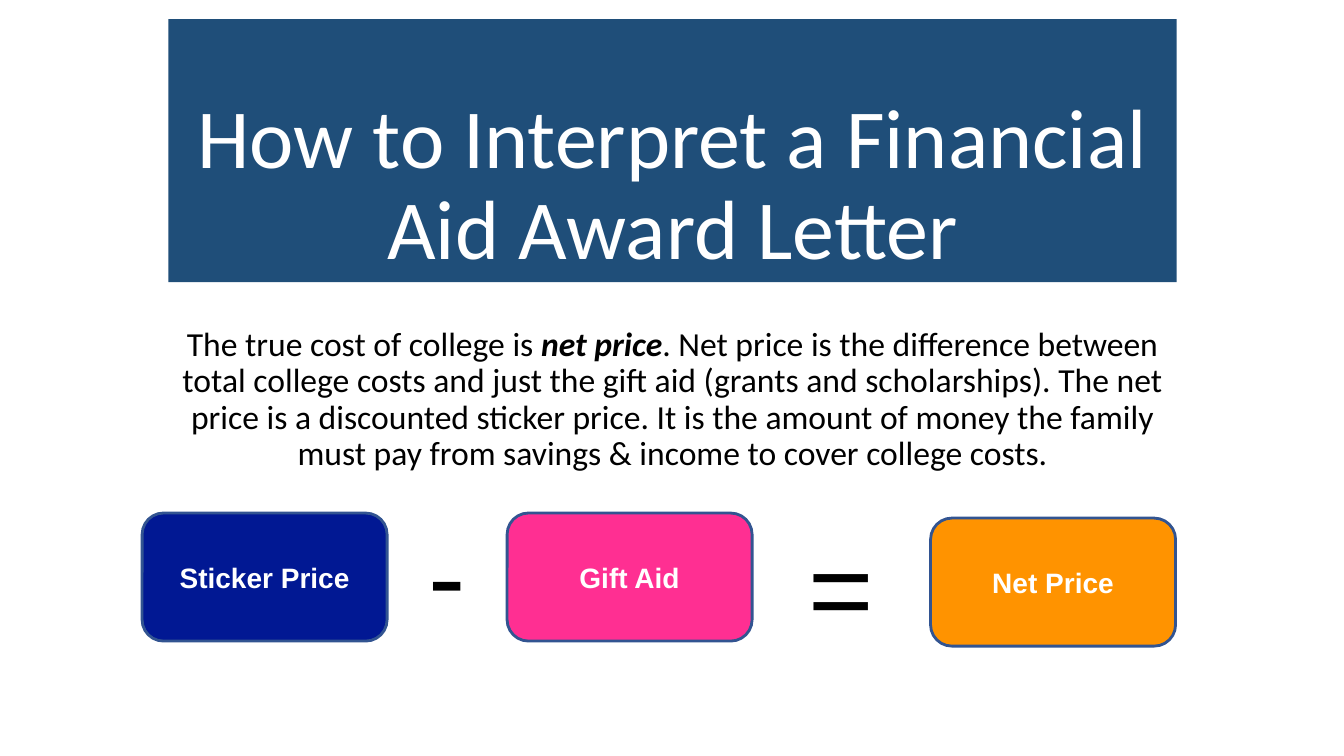
from pptx import Presentation
from pptx.dml.color import RGBColor
from pptx.enum.shapes import MSO_SHAPE
from pptx.enum.text import MSO_ANCHOR, MSO_AUTO_SIZE, PP_ALIGN
from pptx.util import Emu, Pt

RECT, ROUND_RECT = MSO_SHAPE.RECTANGLE, MSO_SHAPE.ROUNDED_RECTANGLE
TOP, MIDDLE, BOTTOM = MSO_ANCHOR.TOP, MSO_ANCHOR.MIDDLE, MSO_ANCHOR.BOTTOM
LEFT, CENTER = PP_ALIGN.LEFT, PP_ALIGN.CENTER
FIT_SHAPE = MSO_AUTO_SIZE.SHAPE_TO_FIT_TEXT

WHITE = RGBColor(0xFF, 0xFF, 0xFF)
BLACK = RGBColor(0x00, 0x00, 0x00)
STEEL = RGBColor(0x1F, 0x4E, 0x79)
OUTLINE = RGBColor(0x32, 0x54, 0x91)
NAVY = RGBColor(0x01, 0x18, 0x93)
PINK = RGBColor(0xFF, 0x2F, 0x92)
ORANGE = RGBColor(0xFF, 0x93, 0x00)

PX = 9144  # EMU per px, 100 px to the inch
CARD_W, CARD_H = 243, 127


def px(*lengths):
    return [Emu(n * PX) for n in lengths]


class Deck:
    heading_font = "Calibri"
    label_font = "Arial"

    def __init__(self, width, height):
        self.prs = Presentation()
        self.prs.slide_width, self.prs.slide_height = px(width, height)
        self.s = self.prs.slides.add_slide(self.prs.slide_layouts[6])

    def set_text(self, sp, runs, font, size, color, anchor=TOP, align=CENTER, spacing=1.0):
        """Fill a shape with one paragraph; runs are (text, bold, italic)."""
        tf = sp.text_frame
        tf.word_wrap = True
        tf.vertical_anchor = anchor
        p = tf.paragraphs[0]
        p.alignment, p.line_spacing = align, spacing
        for text, bold, italic in runs:
            r = p.add_run()
            r.text = text
            r.font.name, r.font.size = font, Pt(size)
            r.font.bold, r.font.italic = bold, italic
            r.font.color.rgb = color

    def box(self, kind, at, fill):
        sp = self.s.shapes.add_shape(kind, *px(*at))
        sp.shadow.inherit = False
        sp.fill.solid()
        sp.fill.fore_color.rgb = fill
        sp.line.fill.background()
        return sp

    def title(self, text, at):
        sp = self.box(RECT, at, STEEL)
        self.set_text(sp, [(text, False, False)], self.heading_font, 60, WHITE, BOTTOM, spacing=0.9)

    def body(self, runs, at):
        sp = self.s.shapes.add_textbox(*px(*at))
        self.set_text(sp, runs, self.heading_font, 24, BLACK, spacing=0.9)

    def card(self, text, x, y, fill):
        sp = self.box(ROUND_RECT, (x, y, CARD_W, CARD_H), fill)
        sp.line.color.rgb = OUTLINE
        sp.line.width = Pt(2)
        self.set_text(sp, [(text, True, False)], self.label_font, 20, WHITE, MIDDLE)

    def operator(self, text, at):
        sp = self.s.shapes.add_textbox(*px(*at))
        self.set_text(sp, [(text, False, False)], self.label_font, 80, BLACK, align=LEFT)
        sp.text_frame.word_wrap = False
        sp.text_frame.auto_size = FIT_SHAPE


def main():
    deck = Deck(1333, 750)
    deck.title("How to Interpret a Financial Aid Award Letter", (167, 19, 1000, 261))
    deck.body([
        ("The true cost of college is ", False, False),
        ("net price", True, True),
        (". Net price is the difference between total college costs and just the gift aid "
         "(grants and scholarships). The net price is a discounted sticker price. It is the "
         "amount of money the family must pay from savings & income to cover college costs.",
         False, False),
    ], (167, 320, 1000, 181))
    for text, x, y, fill in (
        ("Sticker Price", 141, 509, NAVY),
        ("Gift Aid", 503, 509, PINK),
        ("Net Price", 923, 514, ORANGE),
    ):
        deck.card(text, x, y, fill)
    deck.operator("-", (415, 496, 58, 145))
    deck.operator("=", (792, 508, 86, 145))
    deck.prs.save("out.pptx")


if __name__ == "__main__":
    main()
